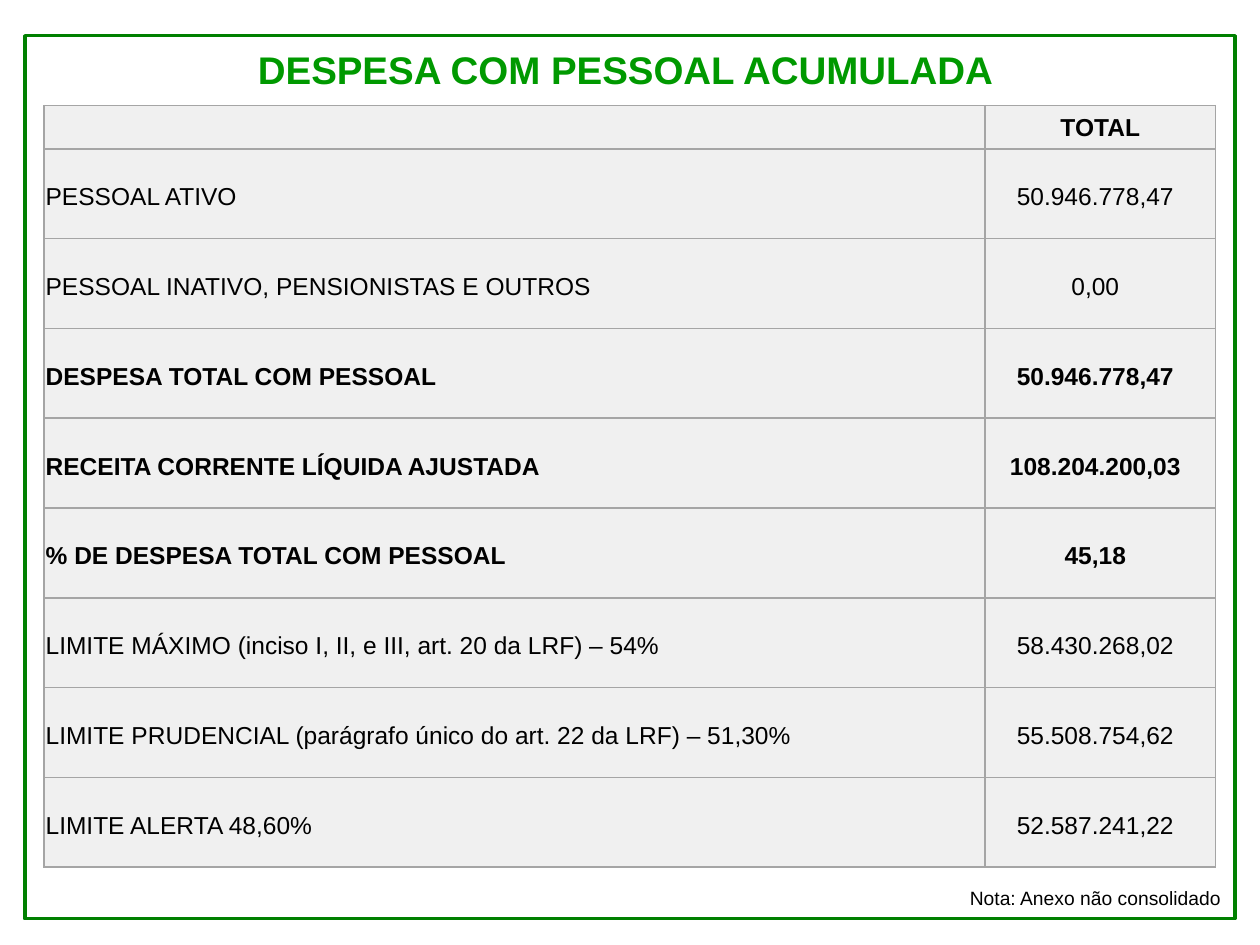
from pptx import Presentation
from pptx.dml.color import RGBColor
from pptx.enum.shapes import MSO_SHAPE
from pptx.enum.text import MSO_ANCHOR, PP_ALIGN
from pptx.oxml import parse_xml
from pptx.oxml.ns import nsdecls
from pptx.util import Cm, Pt

GREEN = RGBColor(0x00, 0x80, 0x00)
LIME = RGBColor(0x00, 0x99, 0x00)
BLACK = RGBColor(0x00, 0x00, 0x00)
PALE = RGBColor(0xF0, 0xF0, 0xF0)
GREY = RGBColor(0xA5, 0xA5, 0xA5)

ROWS = [
    ("", "TOTAL", True),
    ("PESSOAL ATIVO", "50.946.778,47", False),
    ("PESSOAL INATIVO, PENSIONISTAS E OUTROS", "0,00", False),
    ("DESPESA TOTAL COM PESSOAL", "50.946.778,47", True),
    ("RECEITA CORRENTE LÍQUIDA AJUSTADA", "108.204.200,03", True),
    ("% DE DESPESA TOTAL COM PESSOAL", "45,18", True),
    ("LIMITE MÁXIMO (inciso I, II, e III, art. 20 da LRF) – 54%", "58.430.268,02", False),
    ("LIMITE PRUDENCIAL (parágrafo único do art. 22 da LRF) – 51,30%", "55.508.754,62", False),
    ("LIMITE ALERTA 48,60%", "52.587.241,22", False),
]


class Page:
    """Style and current slide, with a method for each kind of element."""

    font = "Arial"

    def __init__(self, deck):
        self.slide = deck.slides.add_slide(deck.slide_layouts[6])
        self.shapes = self.slide.shapes

    def apply(self, item, style):
        for name, value in style.items():
            setattr(item, name, value)

    def text(self, para, words, size, color=BLACK, bold=False, align=PP_ALIGN.LEFT):
        para.alignment = align
        run = para.add_run()
        run.text = words
        self.apply(run.font, {"name": self.font, "size": Pt(size), "bold": bold})
        run.font.color.rgb = color

    def frame(self, x, y, w, h):
        box = self.shapes.add_shape(MSO_SHAPE.RECTANGLE, Cm(x), Cm(y), Cm(w), Cm(h))
        box.shadow.inherit = False
        box.fill.background()
        box.line.color.rgb = GREEN
        box.line.width = Pt(2)

    def label(self, x, y, w, h, words, size, **style):
        box = self.shapes.add_textbox(Cm(x), Cm(y), Cm(w), Cm(h))
        self.apply(box.text_frame, {"word_wrap": True, "vertical_anchor": MSO_ANCHOR.MIDDLE})
        self.text(box.text_frame.paragraphs[0], words, size, **style)

    def border(self, cell):
        props = cell._tc.get_or_add_tcPr()
        for at, side in enumerate(("lnL", "lnR", "lnT", "lnB")):
            props.insert(at, parse_xml(
                f'<a:{side} {nsdecls("a")} w="{Pt(1)}"><a:solidFill>'
                f'<a:srgbClr val="{GREY}"/></a:solidFill></a:{side}>'))

    def cell(self, cell, words, bold, align, top, right):
        self.apply(cell, {
            "margin_left": Cm(0.03), "margin_right": Cm(right),
            "margin_top": Cm(top), "margin_bottom": 0,
            "vertical_anchor": MSO_ANCHOR.MIDDLE,
        })
        cell.fill.solid()
        cell.fill.fore_color.rgb = PALE
        self.border(cell)
        self.text(cell.text_frame.paragraphs[0], words, 14, bold=bold, align=align)

    def table(self, x, y, widths, head, body, rows):
        high = head + body * (len(rows) - 1)
        grid = self.shapes.add_table(
            len(rows), len(widths), Cm(x), Cm(y), Cm(sum(widths)), Cm(high)).table
        for col, width in zip(grid.columns, widths):
            col.width = Cm(width)
        for at, (name, total, bold) in enumerate(rows):
            grid.rows[at].height = Cm(body if at else head)
            top, right = (0.14, 0.23) if at else (0.03, 0.03)
            self.cell(grid.cell(at, 0), name, bold, PP_ALIGN.JUSTIFY, top, right)
            self.cell(grid.cell(at, 1), total, bold, PP_ALIGN.CENTER, top, right)


def main():
    deck = Presentation()
    deck.slide_width, deck.slide_height = Cm(25.4), Cm(19.05)
    page = Page(deck)
    page.frame(0.5, 0.72, 24.4, 17.8)
    page.label(2.31, 0.8, 20.6, 1.2, "DESPESA COM PESSOAL ACUMULADA", 22,
               color=LIME, bold=True, align=PP_ALIGN.CENTER)
    page.table(0.89, 2.13, (18.97, 4.64), 0.87, 1.81, ROWS)
    page.label(19.3, 17.72, 5.9, 0.74, "Nota: Anexo não consolidado", 11)
    deck.save("out.pptx")


if __name__ == "__main__":
    main()
